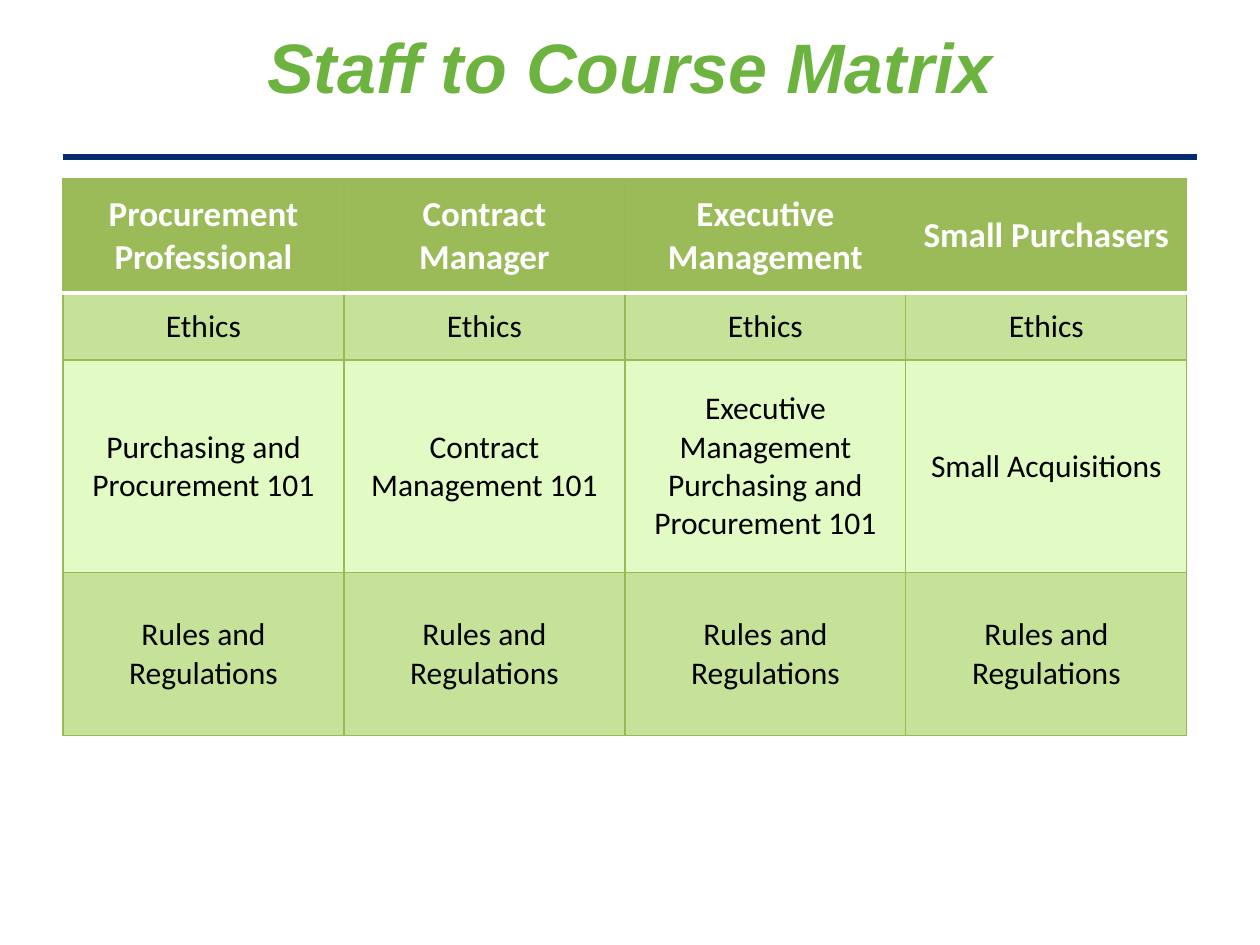
from lxml import etree
from pptx import Presentation
from pptx import util as u
from pptx.dml.color import RGBColor
from pptx.enum import shapes, text
from pptx.oxml.ns import qn

TITLE = "Staff to Course Matrix"
MATRIX = [
    ("Procurement Professional", "Contract Manager",
     "Executive Management", "Small Purchasers"),
    ("Ethics",) * 4,
    ("Purchasing and Procurement 101", "Contract Management 101",
     "Executive Management Purchasing and Procurement 101", "Small Acquisitions"),
    ("Rules and Regulations",) * 4,
]
ROW_HEIGHTS = [114, 67, 213, 163]
COLUMN_WIDTH = 281

LEFT = 63
WIDTH = 1134
TITLE_TOP, TITLE_HEIGHT = 10, 126
RULE_Y = 157
TABLE_TOP = 179

WHITE = RGBColor(0xFF, 0xFF, 0xFF)
BLACK = RGBColor(0x00, 0x00, 0x00)
TITLE_GREEN = RGBColor(0x6D, 0xB3, 0x3F)
NAVY = RGBColor(0x03, 0x2B, 0x6D)
HEADER_GREEN = RGBColor(0x9B, 0xBB, 0x59)
BAND_GREEN = RGBColor(0xC6, 0xE2, 0x99)
PALE_GREEN = RGBColor(0xE2, 0xFA, 0xC3)
BORDER_GREEN = RGBColor(0x98, 0xB9, 0x55)


def px(count):
    return u.Emu(round(count * 914400 / 126))


def set_borders(cell, sides):
    """Draw cell edges; sides maps L, R, T, B (in that order) to (colour, points)."""
    properties = cell._tc.get_or_add_tcPr()
    for index, (side, (colour, points)) in enumerate(sides.items()):
        line = etree.Element(qn(f"a:ln{side}"), w=str(u.Pt(points)))
        fill = etree.SubElement(line, qn("a:solidFill"))
        etree.SubElement(fill, qn("a:srgbClr"), val=str(colour))
        properties.insert(index, line)


def add_title(page):
    title = page.shapes.title
    title.left, title.top = px(LEFT), px(TITLE_TOP)
    title.width, title.height = px(WIDTH), px(TITLE_HEIGHT)
    frame = title.text_frame
    frame.text = TITLE
    frame.vertical_anchor = text.MSO_ANCHOR.TOP
    frame.margin_top = px(13)
    para = frame.paragraphs[0]
    para.alignment = text.PP_ALIGN.CENTER
    font = para.runs[0].font
    font.name, font.size = "Arial", u.Pt(40)
    font.bold = font.italic = True
    font.color.rgb = TITLE_GREEN


def add_rule(page):
    rule = page.shapes.add_connector(
        shapes.MSO_CONNECTOR.STRAIGHT,
        px(LEFT), px(RULE_Y), px(LEFT + WIDTH), px(RULE_Y))
    rule.line.color.rgb = NAVY
    rule.line.width = u.Pt(3)
    etree.SubElement(rule._element.spPr, qn("a:effectLst"))


def format_cell(cell, row):
    header = row == 0
    cell.vertical_anchor = text.MSO_ANCHOR.MIDDLE
    cell.fill.solid()
    cell.fill.fore_color.rgb = (
        HEADER_GREEN if header else BAND_GREEN if row % 2 else PALE_GREEN)
    thin, thick = (BORDER_GREEN, 0.75), (WHITE, 2)
    set_borders(cell, {"L": thin, "R": thin,
                       "T": thick if row == 1 else thin,
                       "B": thick if header else thin})
    para = cell.text_frame.paragraphs[0]
    para.alignment = text.PP_ALIGN.CENTER
    font = para.runs[0].font
    font.name, font.size = "Calibri", u.Pt(20 if header else 18)
    font.bold = header
    font.color.rgb = WHITE if header else BLACK


def add_matrix(page):
    columns = len(MATRIX[0])
    table = page.shapes.add_table(
        len(MATRIX), columns, px(LEFT), px(TABLE_TOP),
        px(COLUMN_WIDTH * columns), px(sum(ROW_HEIGHTS))).table
    for column in table.columns:
        column.width = px(COLUMN_WIDTH)
    for row, (labels, height) in enumerate(zip(MATRIX, ROW_HEIGHTS)):
        table.rows[row].height = px(height)
        for column, label in enumerate(labels):
            cell = table.cell(row, column)
            cell.text_frame.text = label
            format_cell(cell, row)


def main():
    deck = Presentation()
    deck.slide_width, deck.slide_height = px(1260), px(945)
    page = deck.slides.add_slide(deck.slide_layouts.get_by_name("Title Only"))
    add_rule(page)
    add_matrix(page)
    add_title(page)
    deck.save("out.pptx")


if __name__ == "__main__":
    main()
